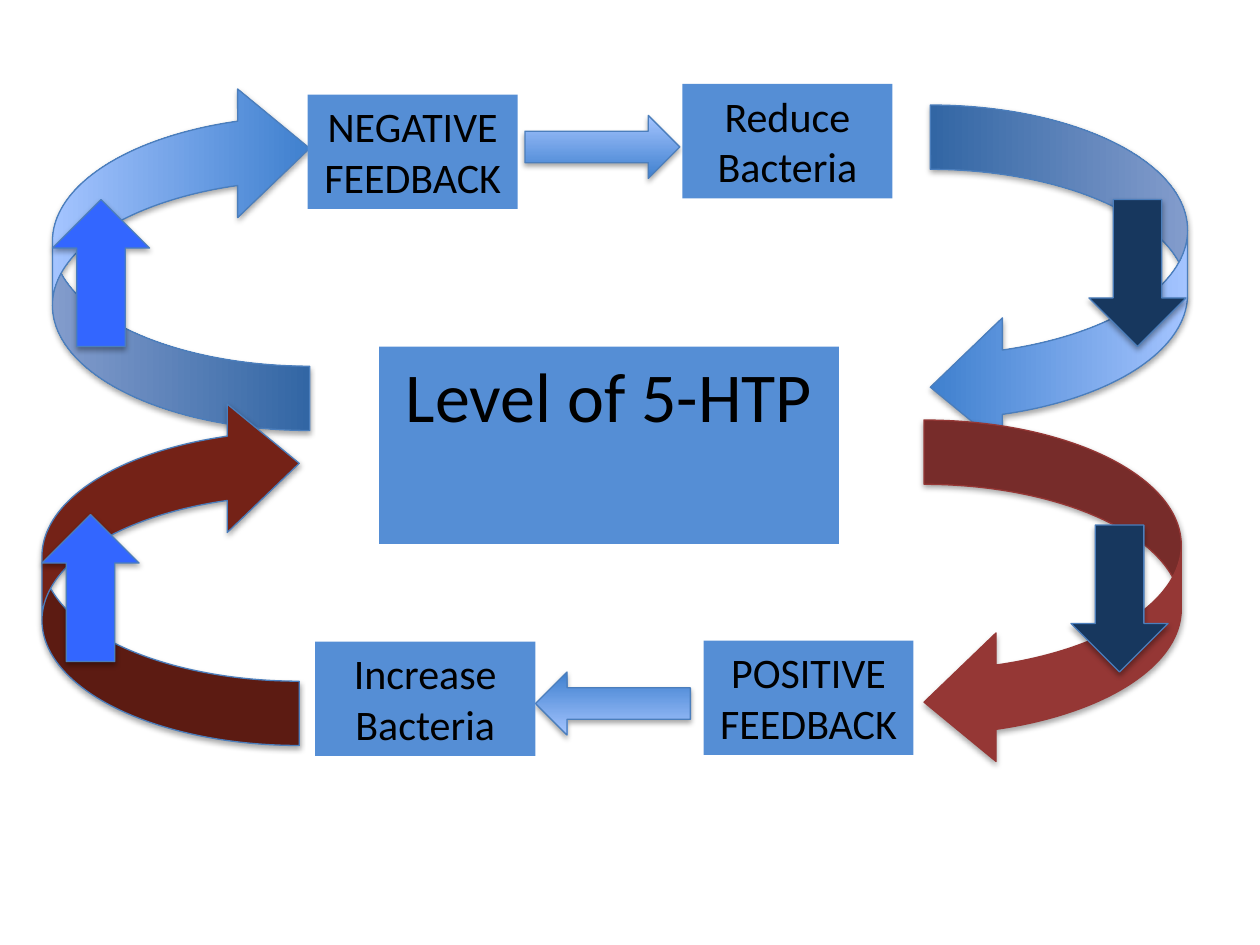
import pptx
import pptx.util
from dataclasses import dataclass
from lxml import etree
from pptx.dml.color import RGBColor
from pptx.enum.shapes import MSO_SHAPE
from pptx.enum.text import MSO_ANCHOR, MSO_AUTO_SIZE, PP_ALIGN

COLS, ROWS = 120, 90
TITLE_ONLY = 5


@dataclass(frozen=True)
class Theme:
    font: str = "Calibri"
    title_size: int = 40
    label_size: int = 24
    text: str = "000000"
    panel: str = "558ED5"
    outline: str = "4B7EBC"
    blue: tuple = ("3F80CE", "A4C4FF")
    light_red: str = "953735"
    dark_red: str = "742217"
    rise: str = "3366FF"
    fall: str = "17375E"


THEME = Theme()
prs = pptx.Presentation()
prs.slide_width = pptx.util.Inches(10)
prs.slide_height = pptx.util.Inches(7.5)


def grid(box):
    """Turn columns and rows into slide lengths."""
    col, row = prs.slide_width / COLS, prs.slide_height / ROWS
    return [round(v * unit) for v, unit in zip(box, (col, row, col, row))]


def add_shadow(sp):
    sp.shadow.inherit = False
    ns = "{http://schemas.openxmlformats.org/drawingml/2006/main}"
    effects = sp._element.spPr.find(ns + "effectLst")
    outer = etree.SubElement(effects, ns + "outerShdw", blurRad="40000",
                             dist="23000", dir="5400000", rotWithShape="0")
    color = etree.SubElement(outer, ns + "srgbClr", val="000000")
    etree.SubElement(color, ns + "alpha", val="35000")


def add_arrow(s, kind, box, fill, rotation=0, line=THEME.outline):
    """A pair of colours as fill gives a gradient."""
    sp = s.shapes.add_shape(kind, *grid(box))
    sp.rotation = rotation
    if isinstance(fill, tuple):
        sp.fill.gradient()
        sp.fill.gradient_angle = 90
        for stop, color in zip(sp.fill.gradient_stops, fill):
            stop.color.rgb = RGBColor.from_string(color)
    else:
        sp.fill.solid()
        sp.fill.fore_color.rgb = RGBColor.from_string(fill)
    sp.line.color.rgb = RGBColor.from_string(line)
    sp.line.width = pptx.util.Pt(0.75)
    add_shadow(sp)
    return sp


def fill_panel(sp, box, text, size):
    sp.left, sp.top, sp.width, sp.height = grid(box)
    sp.fill.solid()
    sp.fill.fore_color.rgb = RGBColor.from_string(THEME.panel)
    tf = sp.text_frame
    tf.text = text
    tf.word_wrap = True
    tf.auto_size = MSO_AUTO_SIZE.SHAPE_TO_FIT_TEXT
    tf.vertical_anchor = MSO_ANCHOR.TOP
    p = tf.paragraphs[0]
    p.alignment = PP_ALIGN.CENTER
    font = p.runs[0].font
    font.name, font.size = THEME.font, pptx.util.Pt(size)
    font.color.rgb = RGBColor.from_string(THEME.text)


def add_label(s, box, text):
    fill_panel(s.shapes.add_textbox(*grid(box)), box, text, THEME.label_size)


def add_turn(s, box, fill, rising, level_at, line=THEME.outline):
    """Curved arrow filling the box, with a level arrow offset inside it."""
    x, y, w, h = box
    # The preset lies on its side, so its frame swaps width and height.
    frame = (x + (w - h) / 2, y + (h - w) / 2, h, w)
    curve = add_arrow(s, MSO_SHAPE.CURVED_DOWN_ARROW, frame, fill,
                      270 if rising else 90, line)
    for i, value in enumerate((0.25, 0.5, 0.28)):
        curve.adjustments[i] = value
    dx, dy = level_at
    add_arrow(s, MSO_SHAPE.UP_ARROW, (x + dx, y + dy, 9.25, 14),
              THEME.rise if rising else THEME.fall, 0 if rising else 180)


def add_step(s, box, rotation=0):
    add_arrow(s, MSO_SHAPE.RIGHT_ARROW, box, THEME.blue, rotation)


def negative_loop(s, x, y):
    add_turn(s, (x, y, 24.5, 33), THEME.blue, True, (0, 11))
    add_label(s, (x + 24.3, y + 1, 20, 10.9), "NEGATIVE FEEDBACK")
    add_step(s, (x + 45, y + 3, 14.75, 6))
    add_label(s, (x + 60, y, 20, 10.9), "Reduce Bacteria")
    add_turn(s, (x + 83.6, y + 2, 24.5, 33), THEME.blue, False, (15.1, 9))


def positive_loop(s, x, y):
    add_turn(s, (x + 84, y + 2, 24.5, 33), THEME.light_red, False, (14, 10),
             THEME.light_red)
    add_label(s, (x + 63, y + 23, 20, 10.9), "POSITIVE FEEDBACK")
    add_step(s, (x + 47, y + 26, 14.75, 6), 180)
    add_label(s, (x + 26, y + 23.1, 21, 10.9), "Increase Bacteria")
    add_turn(s, (x, y, 24.5, 33), THEME.dark_red, True, (0, 11))


def main():
    s = prs.slides.add_slide(prs.slide_layouts[TITLE_ONLY])
    fill_panel(s.shapes.title, (36.1, 33, 43.8, 9.25), "Level of 5-HTP",
               THEME.title_size)
    negative_loop(s, 5, 8)
    positive_loop(s, 4, 38)
    prs.save("out.pptx")


if __name__ == "__main__":
    main()
